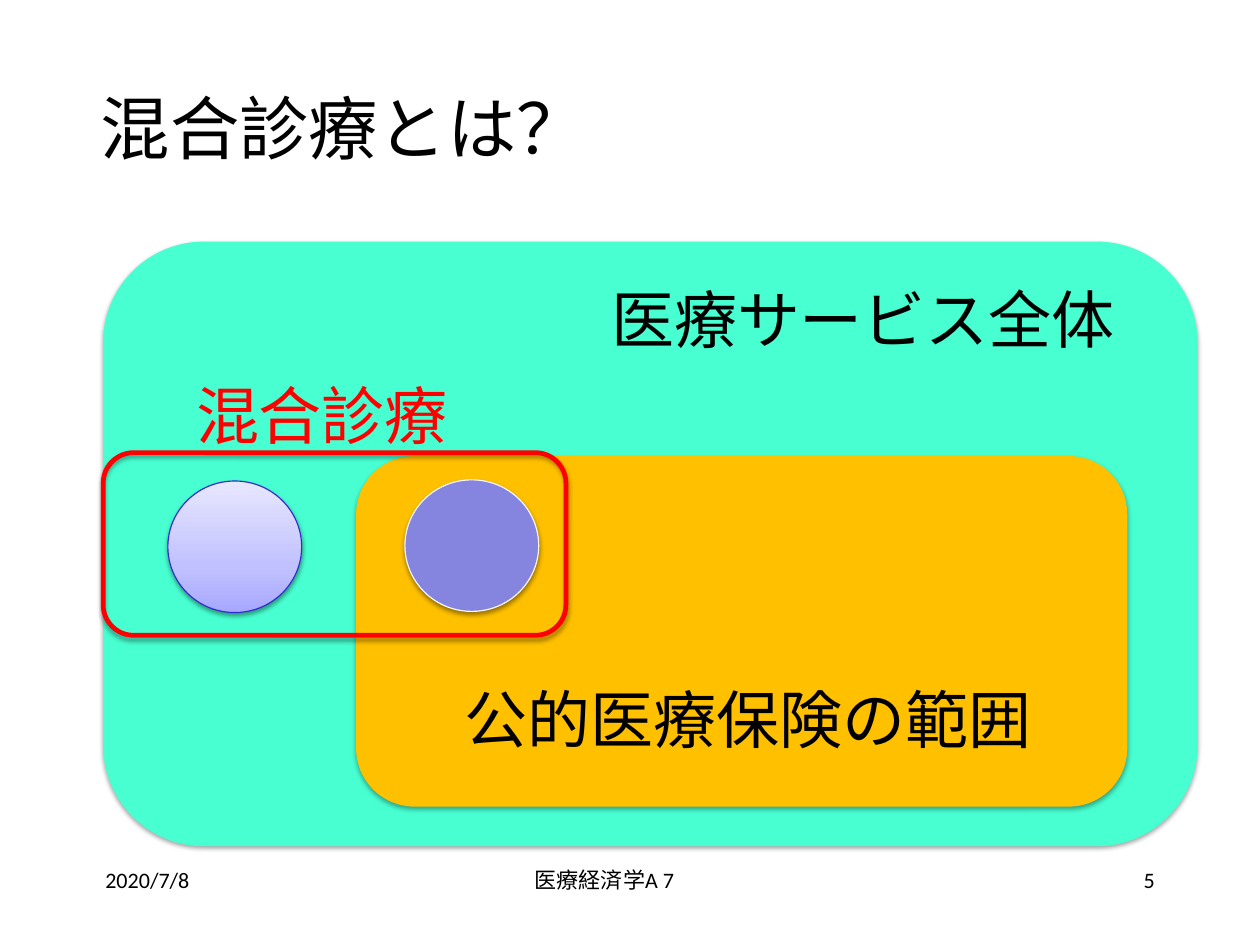
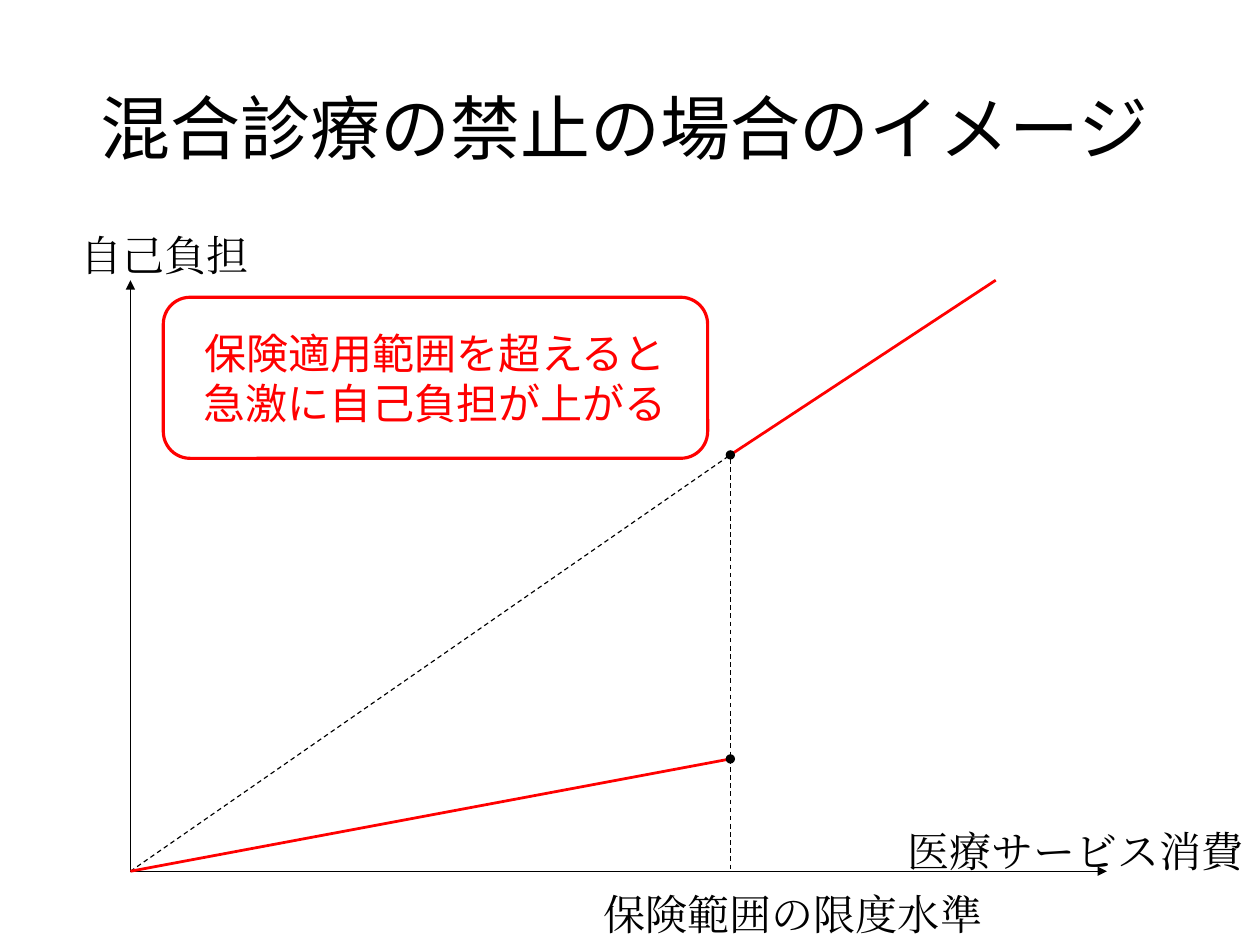
from copy import deepcopy
from dataclasses import dataclass

import lxml.etree
import pptx
import pptx.dml.color
import pptx.enum.dml
import pptx.enum.shapes
import pptx.enum.text
import pptx.oxml.ns
import pptx.slide
import pptx.util

Inches = pptx.util.Inches
Kind = pptx.enum.shapes.MSO_SHAPE
Align = pptx.enum.text.PP_ALIGN
Anchor = pptx.enum.text.MSO_ANCHOR
qn = pptx.oxml.ns.qn

# Shared look
BLACK, RED = "000000", "FF0000"
MINT, AMBER, VIOLET = "47FFD1", "FFC000", "8585E0"
SANS, BODY, SERIF = "Noto Sans CJK JP", "Calibri", "Times New Roman"
FRAME = {
    "word_wrap": True,
    "margin_left": Inches(0.1),
    "margin_right": Inches(0),
    "margin_top": Inches(0.05),
    "margin_bottom": Inches(0.05),
}
TITLE = (0.79, 0.42, 9.44, 1.39)
FOOT_TOP, FOOT_HIGH = 7.59, 0.56

Box = tuple[float, float, float, float]
Point = tuple[float, float]


@dataclass
class Label:
    text: str
    box: Box
    size: float
    font: str = BODY
    color: str = BLACK
    align: Align = Align.LEFT
    anchor: Anchor = Anchor.TOP
    right: float = 0


@dataclass
class Block:
    kind: Kind
    box: Box
    fill: str | list[tuple[float, str]] | None = None
    line: str | None = None
    width: float = 0.75
    shade: int = 0


@dataclass
class Stroke:
    start: Point
    end: Point
    color: str = BLACK
    width: float = 0.75
    dash: bool = False
    head: str = ""
    tail: str = ""


def rgb(code: str) -> pptx.dml.color.RGBColor:
    return pptx.dml.color.RGBColor.from_string(code)


def place(box: tuple) -> list:
    return [Inches(n) for n in box]


def node(top, tag: str, **attrs: str):
    return lxml.etree.SubElement(top, qn(tag), attrs)


# Text
def write(frame, label: Label) -> None:
    form = FRAME | {
        "margin_right": Inches(label.right),
        "vertical_anchor": label.anchor,
    }
    for key, val in form.items():
        setattr(frame, key, val)
    frame.text = label.text
    para = frame.paragraphs[0]
    para.alignment = label.align
    for run in para.runs:
        form = {"name": label.font, "size": pptx.util.Pt(label.size)}
        for key, val in form.items():
            setattr(run.font, key, val)
        run.font.color.rgb = rgb(label.color)
        node(run.font._element, "a:ea", typeface=label.font)


def put(slide: pptx.slide.Slide, label: Label) -> None:
    write(slide.shapes.add_textbox(*place(label.box)).text_frame, label)


def title(slide: pptx.slide.Slide, text: str, size: float) -> None:
    put(slide, Label(text, TITLE, size, SANS, anchor=Anchor.MIDDLE))


def footer(slide: pptx.slide.Slide, date: str, name: str, page: str) -> None:
    for text, left, wide, align in (
        (date, 0.83, 2.32, Align.LEFT),
        (name, 2.48, 5.7, Align.CENTER),
        (page, 7.96, 2.32, Align.RIGHT),
    ):
        box = (left, FOOT_TOP, wide, FOOT_HIGH)
        put(slide, Label(text, box, 14, align=align, right=0.1))


# Shapes
def blend(shape, stops: list[tuple[float, str]]) -> None:
    shape.fill.gradient()
    shape.fill.gradient_angle = 90
    row = shape._element.spPr.find(".//" + qn("a:gsLst"))
    while len(row) < len(stops):
        row.append(deepcopy(row[0]))
    for stop, (spot, code) in zip(shape.fill.gradient_stops, stops):
        stop.position = spot
        stop.color.rgb = rgb(code)


def draw(slide: pptx.slide.Slide, block: Block):
    shape = slide.shapes.add_shape(block.kind, *place(block.box))
    if block.fill is None:
        shape.fill.background()
    elif isinstance(block.fill, str):
        shape.fill.solid()
        shape.fill.fore_color.rgb = rgb(block.fill)
    else:
        blend(shape, block.fill)
    if block.line:
        shape.line.color.rgb = rgb(block.line)
        shape.line.width = pptx.util.Pt(block.width)
    else:
        shape.line.fill.background()
    shape.shadow.inherit = False
    if block.shade:
        glow = shape._element.spPr.find(qn("a:effectLst"))
        cast = node(
            glow, "a:outerShdw", blurRad=str(pptx.util.Pt(3.1)),
            dist=str(pptx.util.Pt(1.8)), dir="5400000", rotWithShape="0",
        )
        tint = node(cast, "a:srgbClr", val=BLACK)
        node(tint, "a:alpha", val=str(block.shade * 1000))
    return shape


def rule(slide: pptx.slide.Slide, stroke: Stroke) -> None:
    link = slide.shapes.add_connector(
        pptx.enum.shapes.MSO_CONNECTOR.STRAIGHT,
        *place(stroke.start + stroke.end),
    )
    link.line.color.rgb = rgb(stroke.color)
    link.line.width = pptx.util.Pt(stroke.width)
    if stroke.dash:
        link.line.dash_style = pptx.enum.dml.MSO_LINE.DASH
    edge = link.line._get_or_add_ln()
    for tag, tip in (("a:headEnd", stroke.head), ("a:tailEnd", stroke.tail)):
        if tip:
            node(edge, tag, type=tip)
    node(link._element.spPr, "a:effectLst")


# Slide: what mixed care is
def scope(slide: pptx.slide.Slide) -> None:
    title(slide, "混合診療とは？", 44)
    pale = [(0, "A7A7FF"), (0.35, "C1C1FF"), (1, "E7E7FF")]
    ring, oval = Kind.ROUNDED_RECTANGLE, Kind.OVAL
    for block in (
        Block(ring, (0.91, 2.13, 9.65, 5.33), MINT, shade=35),
        Block(ring, (3.14, 4.02, 6.8, 3.09), AMBER, shade=35),
        Block(oval, (1.48, 4.24, 1.18, 1.16), pale, "2E2ECB", shade=38),
        Block(oval, (3.57, 4.23, 1.18, 1.16), VIOLET, "F9F9F9", shade=38),
        Block(ring, (0.91, 3.99, 4.08, 1.61), None, RED, 3, shade=35),
    ):
        draw(slide, block)
    for text, left, top, wide, color in (
        ("医療サービス全体", 5.29, 2.42, 4.65, BLACK),
        ("公的医療保険の範囲", 4, 5.95, 5.51, BLACK),
        ("混合診療", 1.63, 3.27, 2.95, RED),
    ):
        put(slide, Label(text, (left, top, wide, 0.77), 40, color=color))
    footer(slide, "2020/7/8", "医療経済学A 7", "5")


# Slide: cost when mixed care is banned
def cost(slide: pptx.slide.Slide) -> None:
    title(slide, "混合診療の禁止の場合のイメージ", 44.4)
    left, base, peak, limit = 1.15, 7.68, 2.47, 6.44
    zero = (left, base)
    high, low = (limit, 4.01), (limit, 6.69)
    for stroke in (
        Stroke(zero, (9.76, base), tail="triangle"),
        Stroke(zero, (left, peak), tail="triangle"),
        Stroke(zero, high, dash=True),
        Stroke(zero, low, RED, 1.75),
        Stroke(high, (8.78, peak), RED, 1.75),
        Stroke(high, low, dash=True, head="oval", tail="oval"),
        Stroke(low, (limit, base), dash=True),
    ):
        rule(slide, stroke)
    size = 26.7
    for text, x, y, wide in (
        ("自己負担", 0.61, 1.97, 2.35),
        ("医療サービス消費", 7.9, 7.23, 3.21),
        ("保険範囲の限度水準", 5.22, 7.78, 4.11),
    ):
        put(slide, Label(text, (x, y, wide, 0.55), size, SERIF))
    box = (1.44, 2.62, 4.8, 1.42)
    note = draw(slide, Block(Kind.ROUNDED_RECTANGLE, box, None, RED, 2))
    text = "保険適用範囲を超えると\v急激に自己負担が上がる"
    write(note.text_frame, Label(
        text, box, size, BODY, RED, Align.CENTER, Anchor.MIDDLE, 0.1))


def main() -> None:
    deck = pptx.Presentation()
    deck.slide_width, deck.slide_height = Inches(11.11), Inches(8.33)
    for build in (scope, cost):
        build(deck.slides.add_slide(deck.slide_layouts[6]))
    deck.save("out.pptx")


if __name__ == "__main__":
    main()
